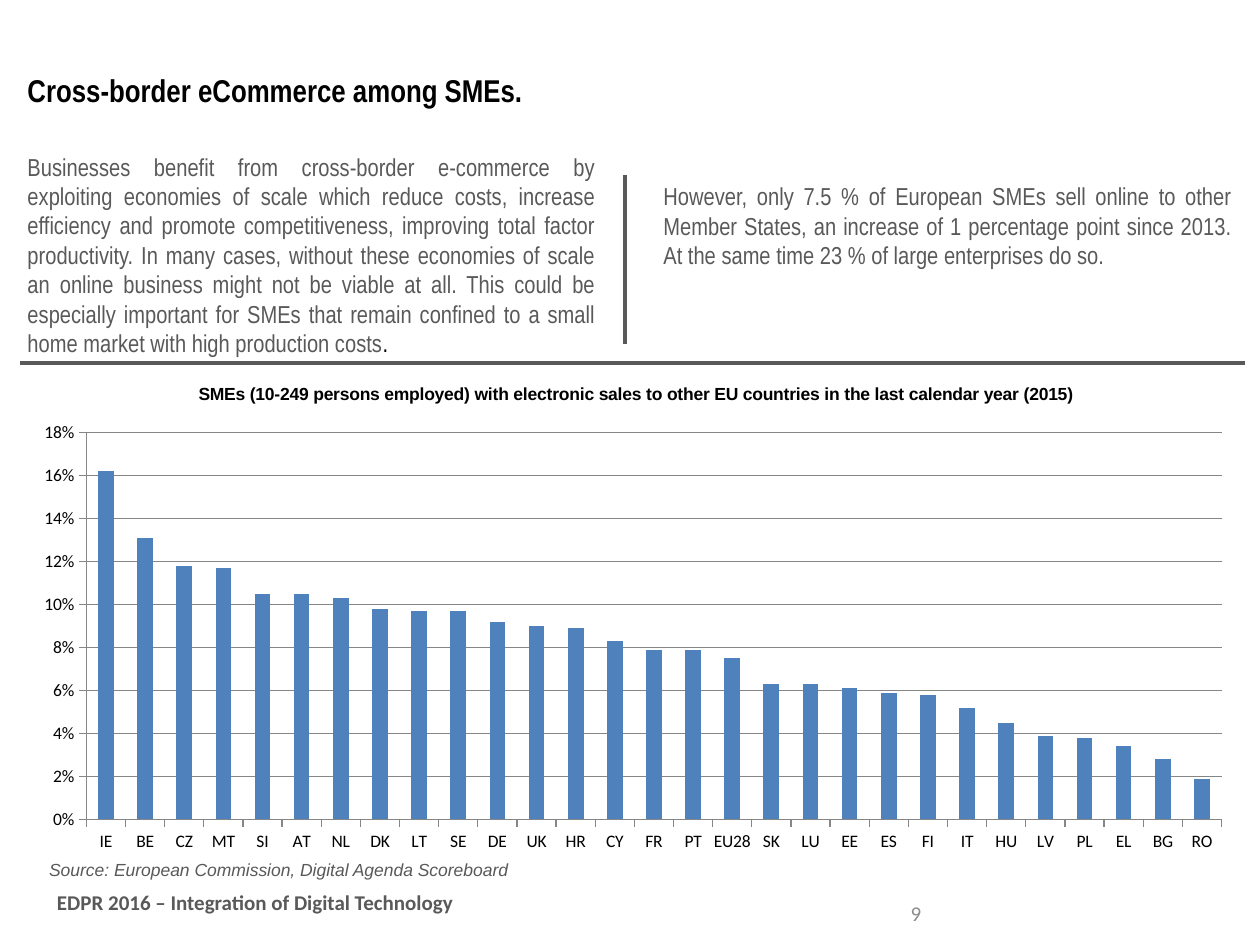
from lxml import etree
from pptx import Presentation
from pptx import util as u
from pptx.chart.data import CategoryChartData
from pptx.dml.color import RGBColor
from pptx.enum import chart as ch, shapes, text
from pptx.oxml import parse_xml
from pptx.oxml.ns import nsdecls, qn

GREY, BLACK, BLUE, AXIS = "595959", "000000", "4F81BD", "868686"
NARROW = "Arial Narrow"

BENEFITS = (
    "Businesses benefit from cross-border e-commerce by exploiting economies of scale "
    "which reduce costs, increase efficiency and promote competitiveness, improving total "
    "factor productivity. In many cases, without these economies of scale an online business "
    "might not be viable at all. This could be especially important for SMEs that remain "
    "confined to a small home market with high production costs"
)
SHARE = (
    "However, only 7.5 % of European SMEs sell online to other Member States, an increase "
    "of 1 percentage point since 2013. At the same time 23 % of large enterprises do so."
)
CHART_TITLE = ("SMEs (10-249 persons employed) with electronic sales to other EU countries "
               "in the last calendar year (2015)")
SALES = {
    "IE": 0.162, "BE": 0.131, "CZ": 0.118, "MT": 0.117, "SI": 0.105, "AT": 0.105,
    "NL": 0.103, "DK": 0.098, "LT": 0.097, "SE": 0.097, "DE": 0.092, "UK": 0.09,
    "HR": 0.089, "CY": 0.083, "FR": 0.079, "PT": 0.079, "EU28": 0.075, "SK": 0.063,
    "LU": 0.063, "EE": 0.061, "ES": 0.059, "FI": 0.058, "IT": 0.052, "HU": 0.045,
    "LV": 0.039, "PL": 0.038, "EL": 0.034, "BG": 0.028, "RO": 0.019,
}


def color(value):
    return RGBColor.from_string(value)


def style_font(font, size, name, fill=BLACK, bold=False, italic=False):
    font.size, font.name, font.bold, font.italic = u.Pt(size), name, bold, italic
    font.color.rgb = color(fill)


def place(box, left, top, width, height):
    box.left, box.top, box.width, box.height = map(u.Pt, (left, top, width, height))


def write(box, content, align=text.PP_ALIGN.LEFT, anchor=text.MSO_ANCHOR.TOP, **style):
    """Fill a box with one paragraph and return that paragraph."""
    frame = box.text_frame
    frame.word_wrap = True
    frame.auto_size = text.MSO_AUTO_SIZE.NONE
    frame.vertical_anchor = anchor
    para = frame.paragraphs[0]
    para.alignment = align
    para.space_before = u.Pt(0)
    add_span(para, content, **style)
    return para


def add_span(para, content, **style):
    span = para.add_run()
    span.text = content
    style_font(span.font, **style)


def add_text(page, area, content, **style):
    box = page.shapes.add_textbox(*map(u.Pt, area))
    return write(box, content, **style)


def remove_bullet(para):
    props = para._p.get_or_add_pPr()
    props.set("marL", "0")
    props.set("indent", "0")
    etree.SubElement(props, qn("a:buNone"))


def add_rule(page, x1, y1, x2, y2):
    rule = page.shapes.add_connector(shapes.MSO_CONNECTOR.STRAIGHT,
                                     *map(u.Pt, (x1, y1, x2, y2)))
    rule.line.color.rgb = color(GREY)
    rule.line.width = u.Pt(2)
    etree.SubElement(rule._element.spPr, qn("a:effectLst"))


def set_plot_layout(chart, **fractions):
    """Fix the inner plot area as fractions of the chart."""
    area = chart._chartSpace.chart.plotArea
    for old in area.findall(qn("c:layout")):
        area.remove(old)
    sizes = "".join(f'<c:{key} val="{value}"/>' for key, value in fractions.items())
    area.insert(0, parse_xml(
        f'<c:layout {nsdecls("c")}><c:manualLayout><c:layoutTarget val="inner"/>'
        f'<c:xMode val="edge"/><c:yMode val="edge"/>{sizes}</c:manualLayout></c:layout>'))


def add_sales_chart(page, area):
    data = CategoryChartData(number_format="0%")
    data.categories = list(SALES)
    data.add_series("Series 1", list(SALES.values()))
    chart = page.shapes.add_chart(ch.XL_CHART_TYPE.COLUMN_CLUSTERED,
                                  *map(u.Pt, area), data).chart
    style_font(chart.font, 10, "Calibri")
    chart.has_legend = False

    # Title
    chart.has_title = True
    chart.chart_title.include_in_layout = False
    add_span(chart.chart_title.text_frame.paragraphs[0], CHART_TITLE,
             size=10, name="Arial", bold=True)

    # Columns
    plot = chart.plots[0]
    plot.gap_width = 150
    plot.vary_by_categories = False
    series = plot.series[0]
    series.format.fill.solid()
    series.format.fill.fore_color.rgb = color(BLUE)

    # Axes
    scale = chart.value_axis
    scale.minimum_scale, scale.maximum_scale, scale.major_unit = 0, 0.18, 0.02
    scale.has_major_gridlines = True
    scale.tick_labels.number_format = "0%"
    scale.tick_labels.number_format_is_linked = False
    for axis in (scale, chart.category_axis):
        axis.major_tick_mark = ch.XL_TICK_MARK.OUTSIDE
        axis.minor_tick_mark = ch.XL_TICK_MARK.NONE
    for owner in (scale, chart.category_axis, scale.major_gridlines):
        owner.format.line.color.rgb = color(AXIS)
        owner.format.line.width = u.Pt(0.75)
    set_plot_layout(chart, x=0.05, y=0.14, w=0.93, h=0.78)


def main():
    deck = Presentation()
    deck.slide_width, deck.slide_height = u.Pt(720), u.Pt(540)
    page = deck.slides.add_slide(deck.slide_layouts[1])
    middle = text.MSO_ANCHOR.MIDDLE
    body_style = dict(size=14, name=NARROW, fill=GREY, align=text.PP_ALIGN.JUSTIFY)

    # Divider lines
    add_rule(page, 357, 100, 357, 196.5)
    add_rule(page, 11.5, 207.5, 711.5, 207.5)

    # Title and the two text columns
    title, body = page.shapes.title, page.placeholders[1]
    place(title, 8.5, 8.5, 703, 86)
    write(title, "Cross-border eCommerce among SMEs.", anchor=middle,
          size=18, name=NARROW, bold=True)
    place(body, 8.5, 83, 339, 142)
    para = write(body, BENEFITS, **body_style)
    remove_bullet(para)
    add_span(para, ". ", size=14, name=NARROW)
    add_text(page, (372, 100, 339, 142), SHARE, **body_style)

    # Chart and its source
    add_sales_chart(page, (14.5, 207.5, 697.5, 283.5))
    add_text(page, (21, 487.5, 360, 19.5),
             "Source: European Commission, Digital Agenda Scoreboard",
             size=10, name="Arial", fill=GREY, italic=True)

    # Footer and page number
    add_text(page, (25.5, 497, 476, 36.5), "EDPR 2016 – Integration of Digital Technology",
             anchor=middle, size=12, name="Calibri", fill=GREY, bold=True)
    add_text(page, (490.5, 507.5, 43, 29), "9", anchor=middle, align=text.PP_ALIGN.RIGHT,
             size=12, name="Calibri", fill="8C8C8C")

    deck.save("out.pptx")


if __name__ == "__main__":
    main()
